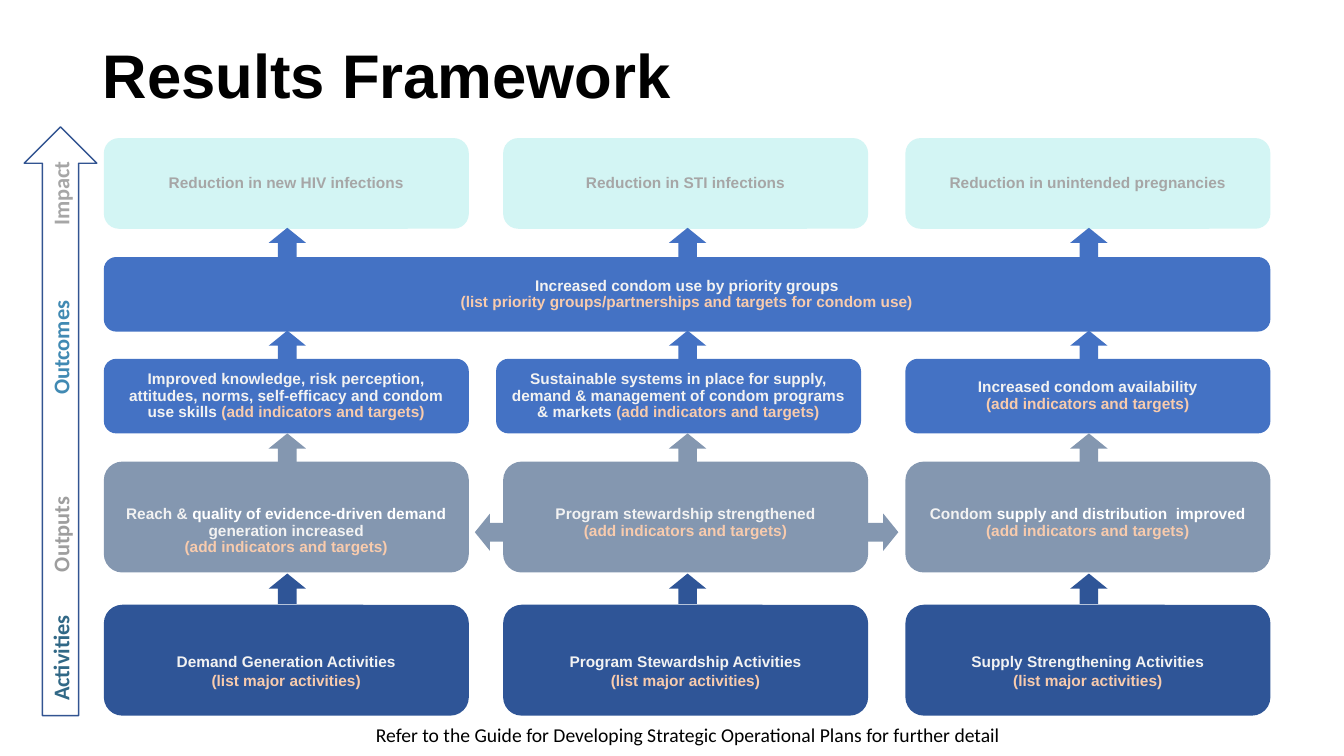
from pptx import Presentation
from pptx.dml.color import RGBColor
from pptx.enum.shapes import MSO_SHAPE as Preset
from pptx.enum.text import MSO_ANCHOR as Anchor, PP_ALIGN as Align
from pptx.util import Inches, Pt

COLORS = {
    "impact": "D3F5F4", "outcome": "4472C4", "output": "8497B0", "activity": "2F5597",
    "gray": "A6A6A6", "light": "F2F2F2", "white": "FFFFFF", "peach": "F8CBAD",
    "black": "000000", "outline": "325491",
    "activities label": "316886", "outputs label": "9E9E9E", "outcomes label": "418AB3",
}
COLUMNS = [1.03, 4.99, 8.98]
BOX_WIDTH = 3.62
ARROW_CENTERS = [2.85, 6.82, 10.8]
ARROW_SIZE = (0.37, 0.3)
ROWS = {  # top, height
    "impact": (1.37, 0.9), "priority": (2.55, 0.74), "outcome": (3.56, 0.74),
    "output": (4.58, 1.1), "activity": (6, 1.1),
}
ARROW_ROWS = [(2.26, "outcome"), (3.28, "outcome"), (4.3, "output"), (5.69, "activity")]
INDICATORS = [("(add indicators and targets)", "peach")]
ACTIVITIES = [("(list major activities)", "peach")]

IMPACTS = [
    [[("Reduction in new HIV infections", "gray")]],
    [[("Reduction in STI infections", "gray")]],
    [[("Reduction in unintended pregnancies", "gray")]],
]
PRIORITY_GROUPS = [
    [("Increased condom use by priority groups", "light")],
    [("(list priority groups/partnerships and targets for condom use)", "peach")],
]
OUTCOMES = [
    [[("Improved knowledge, risk perception, attitudes, norms, "
       "self-efficacy and condom use skills ", "light"), *INDICATORS]],
    [[("Sustainable systems in place for supply, demand & management of "
       "condom programs & markets ", "light"), *INDICATORS]],
    [[("Increased condom availability", "light")], INDICATORS],
]
OUTPUTS = [
    [[("Reach & ", "light"), ("quality of evidence-driven demand ", "white"),
      ("generation increased", "light")], INDICATORS],
    [[("Program stewardship strengthened", "light")], INDICATORS],
    [[("Condom ", "light"), ("supply and distribution  improved", "white")], INDICATORS],
]
ACTIVITY_GROUPS = [
    [[(f"{name} Activities", "light")], ACTIVITIES]
    for name in ("Demand Generation", "Program Stewardship", "Supply Strengthening")
]
LABELS = [  # text, color, vertical center, length
    ("Activities", "activities label", 6.53, 1.11),
    ("Outputs", "outputs label", 5.3, 1.01),
    ("Outcomes", "outcomes label", 3.45, 1.15),
    ("Impact", "gray", 1.92, 0.86),
]


def rgb(name):
    return RGBColor.from_string(COLORS[name])


def write_text(shape, paragraphs, size=11, font="Arial", bold=True, align=Align.CENTER,
               anchor=Anchor.MIDDLE, spacing=0.9, top=0.05, wrap=True):
    """Fill a shape with paragraphs, each a list of (text, color name) runs."""
    frame = shape.text_frame
    frame.word_wrap = wrap
    frame.vertical_anchor = anchor
    frame.margin_top = Inches(top)
    for index, pieces in enumerate(paragraphs):
        paragraph = frame.add_paragraph() if index else frame.paragraphs[0]
        paragraph.alignment = align
        paragraph.line_spacing = spacing
        for text, color in pieces:
            run = paragraph.add_run()
            run.text = text
            run.font.size = Pt(size)
            run.font.name = font
            run.font.bold = bold
            run.font.color.rgb = rgb(color)


def add_preset(slide, preset, left, top, width, height, fill=None, line=None):
    shape = slide.shapes.add_shape(preset, *map(Inches, (left, top, width, height)))
    shape.shadow.inherit = False
    if fill:
        shape.fill.solid()
        shape.fill.fore_color.rgb = rgb(fill)
    else:
        shape.fill.background()
    if line:
        shape.line.color.rgb = rgb(line)
        shape.line.width = Pt(1)
    else:
        shape.line.fill.background()
    return shape


def add_box(slide, row, left, width, fill, paragraphs, **text_format):
    top, height = ROWS[row]
    box = add_preset(slide, Preset.ROUNDED_RECTANGLE, left, top, width, height, fill)
    write_text(box, paragraphs, **text_format)


def add_box_row(slide, row, contents, columns=COLUMNS, **text_format):
    for left, paragraphs in zip(columns, contents):
        add_box(slide, row, left, BOX_WIDTH, row, paragraphs, **text_format)


def add_arrow(slide, center, top, fill, rotation=0):
    width, height = ARROW_SIZE
    arrow = add_preset(slide, Preset.UP_ARROW, center - width / 2, top, width, height, fill)
    arrow.rotation = rotation


def add_text(slide, left, top, width, height, text, color, **text_format):
    box = slide.shapes.add_textbox(*map(Inches, (left, top, width, height)))
    write_text(box, [[(text, color)]], **text_format)
    return box


def add_level_scale(slide):
    """Draw the tall arrow at the left edge and its sideways level names."""
    center, height = 0.6, 0.37
    for text, color, middle, length in LABELS:
        label = add_text(slide, center - length / 2, middle - height / 2, length, height,
                         text, color, size=16, font="Calibri", spacing=1, wrap=False)
        label.rotation = 270
    add_preset(slide, Preset.UP_ARROW, 0.24, 1.26, 0.72, 5.84, line="outline")


def main():
    presentation = Presentation()
    presentation.slide_width = Inches(13.33)
    presentation.slide_height = Inches(7.5)
    slide = presentation.slides.add_slide(presentation.slide_layouts[6])

    add_text(slide, 0.92, 0.4, 11.5, 1.45, "Results Framework", "black",
             size=44, align=Align.LEFT, anchor=Anchor.TOP)
    add_box_row(slide, "impact", IMPACTS)
    full_width = COLUMNS[-1] + BOX_WIDTH - COLUMNS[0]
    add_box(slide, "priority", COLUMNS[0], full_width, "outcome", PRIORITY_GROUPS)
    add_box_row(slide, "outcome", OUTCOMES, columns=[1.03, 4.92, 8.98])
    add_box_row(slide, "output", OUTPUTS, anchor=Anchor.TOP, top=0.39)
    add_box_row(slide, "activity", ACTIVITY_GROUPS, anchor=Anchor.TOP, top=0.42, spacing=1)

    for top, fill in ARROW_ROWS:
        for center in ARROW_CENTERS:
            add_arrow(slide, center, top, fill)
    for center, rotation in ((4.86, 270), (8.76, 90)):
        add_arrow(slide, center, 5.13, "output", rotation)

    add_level_scale(slide)
    add_text(slide, 3.62, 7.12, 6.41, 0.34,
             "Refer to the Guide for Developing Strategic Operational Plans for further detail",
             "black", size=14, font="Calibri", bold=False, spacing=1, wrap=False)
    presentation.save("out.pptx")


if __name__ == "__main__":
    main()
